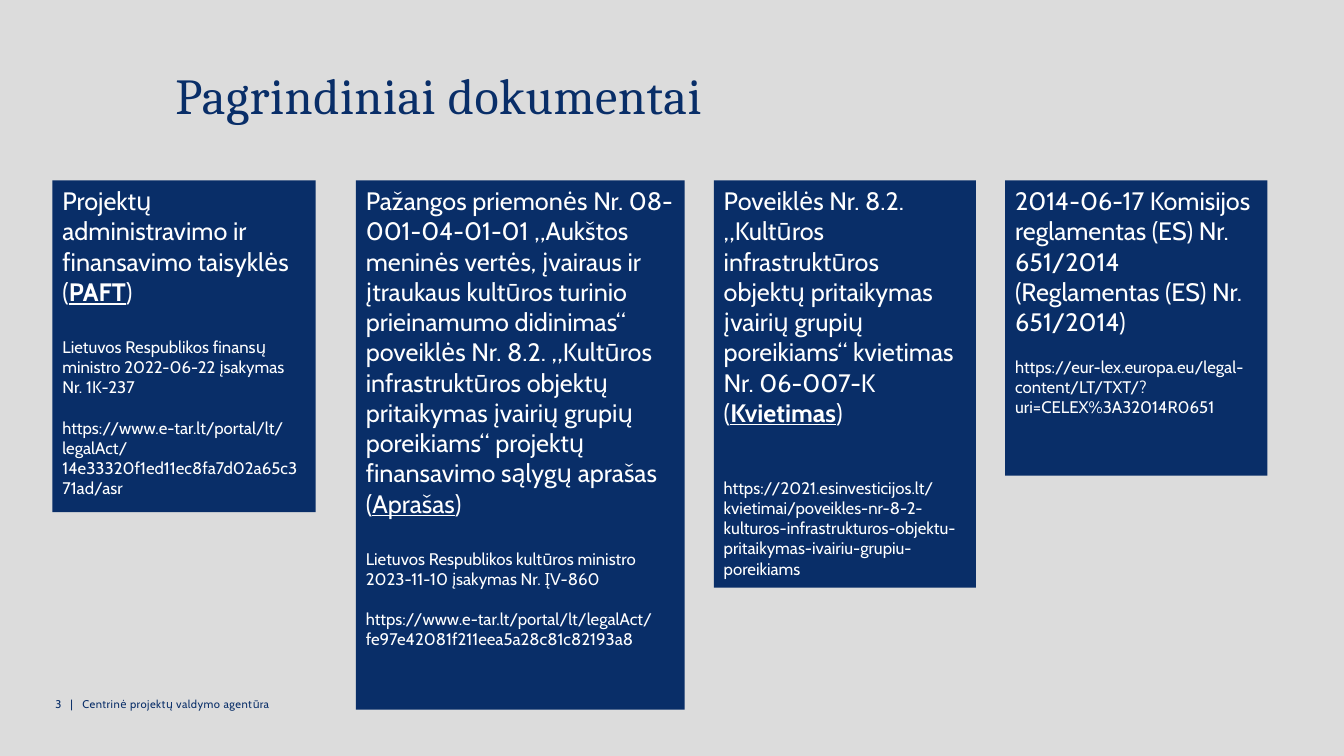
from lxml import etree
from pptx import Presentation
from pptx import util as u
from pptx.dml.color import RGBColor
from pptx.enum import shapes, text
from pptx.oxml.ns import qn

NAVY = RGBColor(0x09, 0x2E, 0x68)
WHITE = RGBColor(0xFF, 0xFF, 0xFF)
GREY = RGBColor(0xDC, 0xDC, 0xDC)
TOP = 1.79

CARDS = [
    (0.52, 2.61, 3.29,
     [("Projektų administravimo ir finansavimo taisyklės (", ""), ("PAFT", "bu"), (")", "")],
     [(21.6, "Lietuvos Respublikos finansų ministro 2022-06-22 įsakymas Nr. 1K-237"),
      (14.4, "https://www.e-tar.lt/portal/lt/legalAct/14e33320f1ed11ec8fa7d02a65c371ad/asr")]),
    (3.53, 3.26, 5.25,
     [("Pažangos priemonės Nr. 08-001-04-01-01 „Aukštos meninės vertės, įvairaus ir "
       "įtraukaus kultūros turinio prieinamumo didinimas“ poveiklės Nr. 8.2. „Kultūros "
       "infrastruktūros objektų pritaikymas įvairių grupių poreikiams“ projektų "
       "finansavimo sąlygų aprašas (", ""), ("Aprašas", "u"), (")", "")],
     [(21.6, "Lietuvos Respublikos kultūros ministro 2023-11-10 įsakymas Nr. ĮV-860"),
      (14.4, "https://www.e-tar.lt/portal/lt/legalAct/fe97e42081f211eea5a28c81c82193a8")]),
    (7.08, 2.6, 4.04,
     [("Poveiklės Nr. 8.2. „Kultūros infrastruktūros objektų pritaikymas įvairių grupių "
       "poreikiams“ kvietimas Nr. 06-007-K (", ""), ("Kvietimas", "bu"), (")", "")],
     [(36, "https://2021.esinvesticijos.lt/kvietimai/poveikles-nr-8-2-kulturos-"
           "infrastrukturos-objektu-pritaikymas-ivairiu-grupiu-poreikiams")]),
    (9.97, 2.6, 2.93,
     [("2014-06-17 Komisijos reglamentas (ES) Nr. 651/2014 "
       "(Reglamentas (ES) Nr. 651/2014)", "")],
     [(14.4, "https://eur-lex.europa.eu/legal-content/LT/TXT/?uri=CELEX%3A32014R0651")]),
]


def write(para, words, size=12, face="Cabin", color=WHITE, marks="", gap=None):
    run = para.add_run()
    run.text = words
    font = run.font
    font.size, font.name = u.Pt(size), face
    font.color.rgb = color
    font.bold = "b" in marks
    font.underline = "u" in marks
    if gap:
        font._element.set("spc", str(round(gap * 100)))


class Deck:
    def __init__(self):
        self.file = Presentation()
        self.file.slide_width = u.Inches(13.33)
        self.file.slide_height = u.Inches(7.5)
        self.slide = self.file.slides.add_slide(self.file.slide_layouts[5])
        fill = self.slide.background.fill
        fill.solid()
        fill.fore_color.rgb = GREY

    def title(self, words):
        box = self.slide.shapes.title
        box.left, box.top = u.Inches(1.64), u.Inches(0.64)
        box.width, box.height = u.Inches(11.14), u.Inches(0.7)
        frame = box.text_frame
        frame.auto_size = text.MSO_AUTO_SIZE.NONE
        frame.vertical_anchor = text.MSO_ANCHOR.MIDDLE
        para = frame.paragraphs[0]
        para.alignment = text.PP_ALIGN.LEFT
        para.line_spacing = 0.8
        write(para, words, size=36, face="Cambria", color=NAVY, gap=0.4)

    def footer(self, words, stops):
        box = self.slide.shapes.add_textbox(
            u.Inches(0.45), u.Inches(6.87), u.Inches(3.2), u.Inches(0.4))
        frame = box.text_frame
        frame.word_wrap = True
        para = frame.paragraphs[0]
        tabs = etree.SubElement(para._p.get_or_add_pPr(), qn("a:tabLst"))
        for stop in stops:
            etree.SubElement(tabs, qn("a:tab"), pos=str(u.Inches(stop)), algn="l")
        write(para, words, size=8, color=NAVY, gap=0.3)

    def card(self, left, width, height, head, notes):
        box = self.slide.shapes.add_shape(
            shapes.MSO_SHAPE.RECTANGLE, u.Inches(left), u.Inches(TOP),
            u.Inches(width), u.Inches(height))
        box.shadow.inherit = False
        box.fill.solid()
        box.fill.fore_color.rgb = NAVY
        box.line.fill.background()
        frame = box.text_frame
        frame.word_wrap = True
        frame.vertical_anchor = text.MSO_ANCHOR.TOP
        para = frame.paragraphs[0]
        para.alignment = text.PP_ALIGN.LEFT
        for words, marks in head:
            write(para, words, size=18, marks=marks)
        for space, words in notes:
            para = frame.add_paragraph()
            para.alignment = text.PP_ALIGN.LEFT
            para.space_before = u.Pt(space)
            write(para, words)


def main():
    deck = Deck()
    deck.title("Pagrindiniai dokumentai")
    deck.footer("3\t|\tCentrinė projektų valdymo agentūra", (0.15, 0.27))
    for card in CARDS:
        deck.card(*card)
    deck.file.save("out.pptx")


if __name__ == "__main__":
    main()
